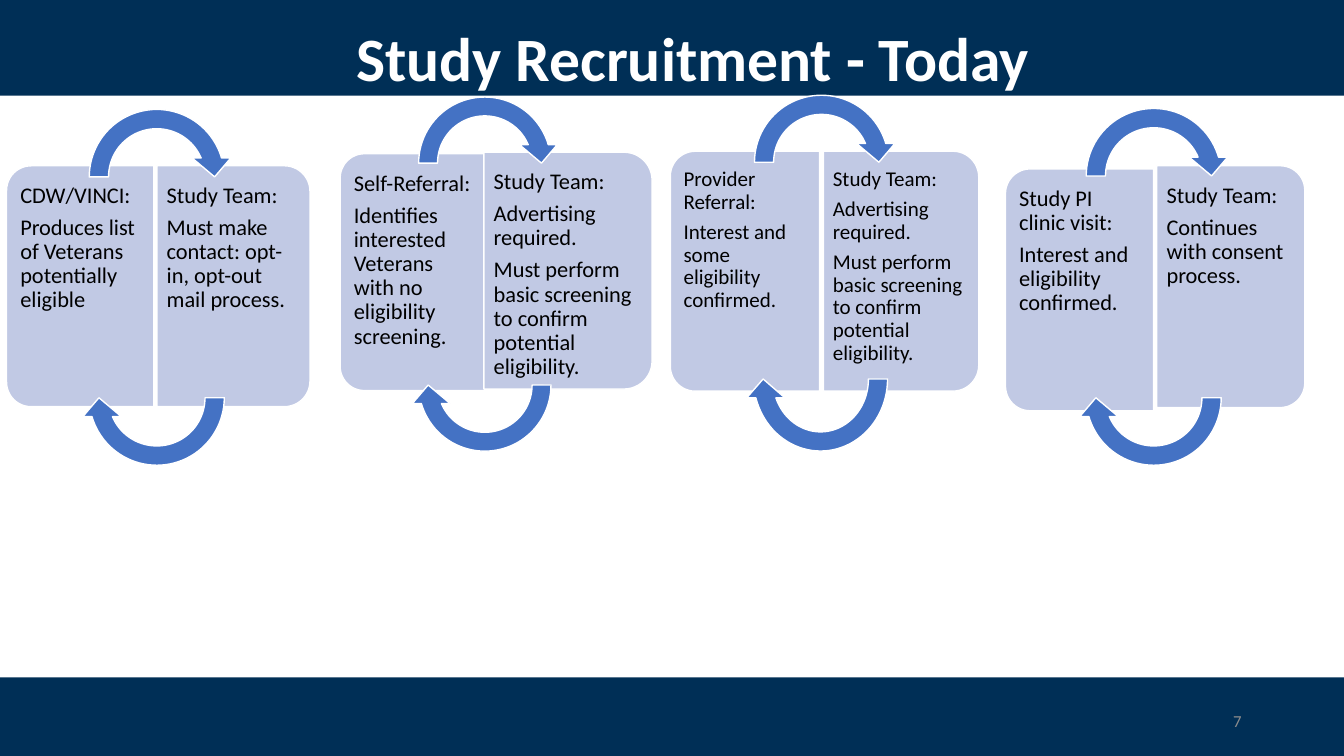
from pptx import Presentation
from pptx.dml.color import RGBColor
from pptx.enum.shapes import MSO_SHAPE
from pptx.enum.text import MSO_ANCHOR, MSO_AUTO_SIZE, PP_ALIGN
from pptx.util import Pt

RECT = MSO_SHAPE.RECTANGLE
PANEL = MSO_SHAPE.ROUND_2_SAME_RECTANGLE
ARC_ARROW = MSO_SHAPE.CIRCULAR_ARROW
TOP, MIDDLE = MSO_ANCHOR.TOP, MSO_ANCHOR.MIDDLE
CENTER, RIGHT = PP_ALIGN.CENTER, PP_ALIGN.RIGHT
NO_FIT = MSO_AUTO_SIZE.NONE

FONT = "Calibri"
NAVY, BLUE, LAVENDER = "002F56", "4472C4", "C1C9E4"
WHITE, BLACK, GRAY = "FFFFFF", "000000", "8C8C8C"
WIDTH, HEIGHT = 960, 540
TEXT_GAP = 5
ARROW_ADJUST = (0.125, 11.423, 204.577, 108, 0.125)

ADVERTISING = ["Study Team:", "Advertising required.",
               "Must perform basic screening to confirm potential eligibility."]

# Each panel is (left, top, width, height, paragraphs); each arrow is a box.
PAIRS = [
    (16,
     (4.7, 118.4, 105.1, 172.1,
      ["CDW/VINCI:", "Produces list of Veterans potentially eligible"]),
     (112, 118.4, 109.4, 172.1,
      ["Study Team:", "Must make contact: opt-in, opt-out mail process."]),
     (56.9, 71.3, 110.2, 110.2), (56.9, 229, 110.2, 110.2)),
    (16,
     (718.2, 120.6, 105.8, 172.8,
      ["Study PI clinic visit:", "Interest and eligibility confirmed."]),
     (826.2, 118.4, 105.8, 172.8,
      ["Study Team:", "Continues with consent process."]),
     (769, 70.6, 110.2, 110.2), (769, 229, 110.2, 110.2)),
    (15,
     (478.8, 108, 106.6, 171.4,
      ["Provider Referral:", "Interest and some eligibility confirmed."]),
     (588.2, 108, 110.9, 171.4, ADVERTISING),
     (532.1, 61.2, 109.4, 109.4), (531.4, 212.4, 109.4, 116.6)),
    (16,
     (243, 109.8, 103.7, 169.2,
      ["Self-Referral:",
       "Identifies interested Veterans with no eligibility screening."]),
     (345.6, 108.7, 120.2, 169.2, ADVERTISING),
     (292.3, 62.6, 108, 108), (292.3, 221, 108, 108)),
]


def rgb(value):
    return RGBColor.from_string(value)


def place(shape, left, top, width, height):
    shape.left, shape.top = Pt(left), Pt(top)
    shape.width, shape.height = Pt(width), Pt(height)


def set_font(p, size, color, bold=False):
    for r in p.runs:
        r.font.name, r.font.size, r.font.bold = FONT, Pt(size), bold
        r.font.color.rgb = rgb(color)


def set_frame(tf, left, top, right, bottom, anchor=TOP):
    tf.word_wrap, tf.auto_size = True, NO_FIT
    tf.vertical_anchor = anchor
    tf.margin_left, tf.margin_top = Pt(left), Pt(top)
    tf.margin_right, tf.margin_bottom = Pt(right), Pt(bottom)


def add_filled(shapes, kind, box, fill, line=None, rotation=0, adjust=()):
    shape = shapes.add_shape(kind, *map(Pt, box))
    shape.shadow.inherit = False
    shape.fill.solid()
    shape.fill.fore_color.rgb = rgb(fill)
    if line:
        shape.line.color.rgb = rgb(line)
        shape.line.width = Pt(1)
    else:
        shape.line.fill.background()
    shape.rotation = rotation
    for i, value in enumerate(adjust):
        shape.adjustments[i] = value
    return shape


def add_bar(s, top, height):
    bar = add_filled(s.shapes, RECT, (0, top, WIDTH, height), NAVY)
    s.shapes.element.insert(2, bar.element)


def add_title(s, text):
    title = s.shapes.title
    place(title, 139, 13, 712, 49)
    tf = title.text_frame
    tf.text = text
    set_frame(tf, 3.6, 1.4, 3.6, 1.4)
    p = tf.paragraphs[0]
    p.alignment = CENTER
    set_font(p, 44, WHITE, bold=True)


def add_page_number(s, text):
    tf = s.shapes.add_textbox(Pt(678), Pt(500.4), Pt(216), Pt(28.8)).text_frame
    tf.text = text
    set_frame(tf, 7.2, 3.6, 7.2, 3.6, MIDDLE)
    p = tf.paragraphs[0]
    p.alignment = RIGHT
    set_font(p, 12, GRAY)


def add_panel(shapes, panel, size, on_left):
    left, top, width, height, lines = panel
    turned = (left + (width - height) / 2, top + (height - width) / 2,
              height, width)
    add_filled(shapes, PANEL, turned, LAVENDER, WHITE,
               270 if on_left else 90, (0.167, 0))
    text_left = left + TEXT_GAP if on_left else left
    box = (text_left, top + TEXT_GAP, width - TEXT_GAP, height - 2 * TEXT_GAP)
    tf = shapes.add_textbox(*map(Pt, box)).text_frame
    tf.text = "\n".join(lines)
    outer, inner, vertical = size * 0.3, size * 0.45, size * 0.5
    sides = (outer, inner) if on_left else (inner, outer)
    set_frame(tf, sides[0], vertical, sides[1], vertical)
    for p in tf.paragraphs:
        p.line_spacing = 0.9
        p.space_after = Pt(size * 0.35)
        set_font(p, size, BLACK)


def add_pair(s, size, source, team, top_arrow, bottom_arrow):
    shapes = s.shapes.add_group_shape().shapes
    add_panel(shapes, source, size, True)
    add_panel(shapes, team, size, False)
    for box, rotation in ((top_arrow, 0), (bottom_arrow, 180)):
        add_filled(shapes, ARC_ARROW, box, BLUE, WHITE, rotation, ARROW_ADJUST)


def main():
    prs = Presentation()
    prs.slide_width, prs.slide_height = Pt(WIDTH), Pt(HEIGHT)
    s = prs.slides.add_slide(prs.slide_layouts[5])
    add_bar(s, 0, 68.4)
    add_bar(s, 483.8, HEIGHT - 483.8)
    add_page_number(s, "7")
    add_title(s, "Study Recruitment - Today")
    for pair in PAIRS:
        add_pair(s, *pair)
    prs.save("out.pptx")


if __name__ == "__main__":
    main()
